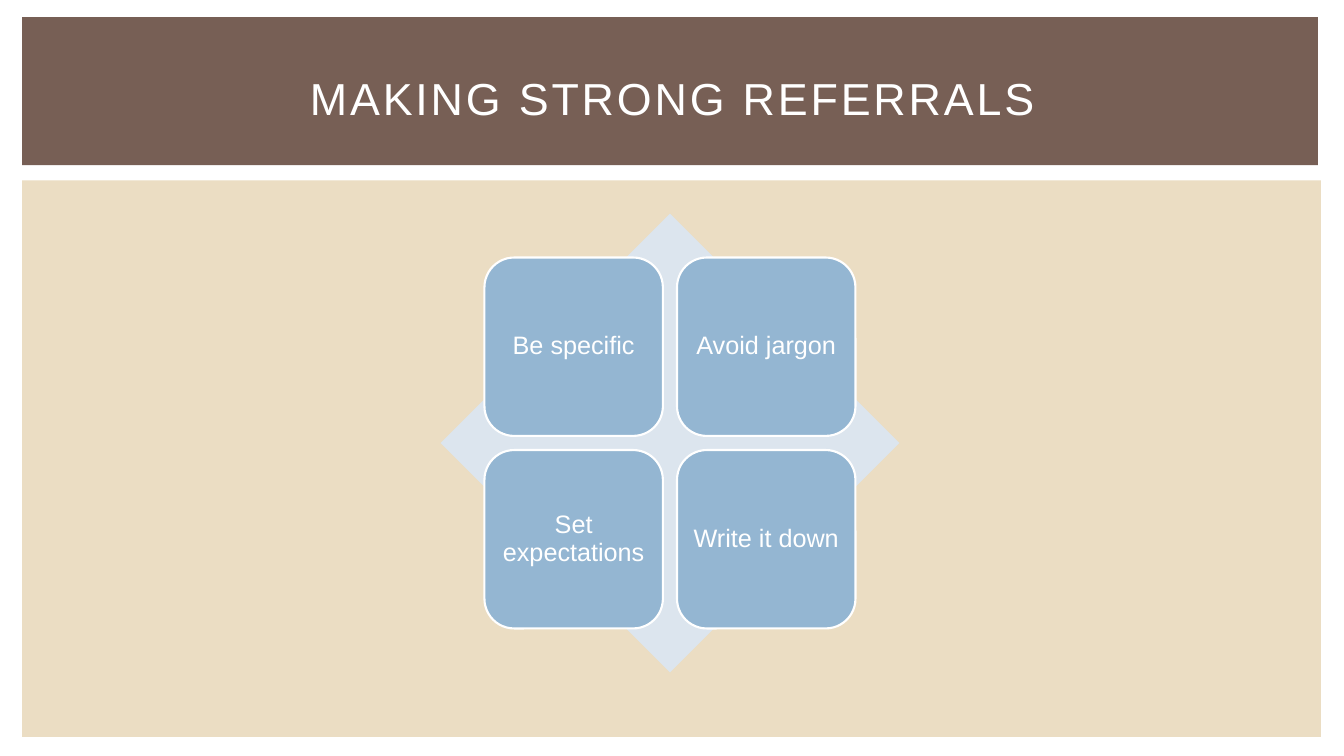
from dataclasses import dataclass

from pptx import Presentation
from pptx.dml.color import RGBColor
from pptx.enum.shapes import MSO_SHAPE
from pptx.enum.text import MSO_ANCHOR, PP_ALIGN
from pptx.util import Inches, Pt


@dataclass(frozen=True)
class Theme:
    font: str = "Arial"
    white: str = "FFFFFF"
    banner: str = "775F55"
    panel: str = "EBDDC3"
    diamond: str = "DCE5EE"
    tile: str = "94B6D2"
    title_size: int = 32
    tile_size: int = 18
    tile_line: float = 1.5


THEME = Theme()


def add_block(slide, kind, box, fill, line=None):
    sp = slide.shapes.add_shape(kind, *map(Inches, box))
    sp.shadow.inherit = False
    sp.fill.solid()
    sp.fill.fore_color.rgb = RGBColor.from_string(fill)
    if line:
        sp.line.color.rgb = RGBColor.from_string(line)
        sp.line.width = Pt(THEME.tile_line)
    else:
        sp.line.fill.background()
    return sp


def add_text(sp, text, size, inset=0):
    tf = sp.text_frame
    tf.word_wrap = True
    tf.vertical_anchor = MSO_ANCHOR.MIDDLE
    tf.margin_left = tf.margin_right = Inches(inset)
    tf.margin_top = tf.margin_bottom = Inches(inset)
    p = tf.paragraphs[0]
    p.alignment = PP_ALIGN.CENTER
    r = p.add_run()
    r.text = text
    r.font.name = THEME.font
    r.font.size = Pt(size)
    r.font.color.rgb = RGBColor.from_string(THEME.white)
    return p, r


def add_banner(slide, box, title):
    left, top, width, height = box
    add_block(slide, MSO_SHAPE.RECTANGLE, box, THEME.banner)
    title_box = (left + 0.34, top + 0.22, width - 0.63, height - 0.32)
    tb = slide.shapes.add_textbox(*map(Inches, title_box))
    p, r = add_text(tb, title, THEME.title_size, 0.05)
    r.font._element.set("spc", "200")


def add_matrix(slide, box, labels):
    left, top, side, _ = box
    add_block(slide, MSO_SHAPE.DIAMOND, box, THEME.diamond)
    tile, gap = 1.77, 0.14
    margin = (side - 2 * tile - gap) / 2
    for i, label in enumerate(labels):
        row, col = divmod(i, 2)
        x = left + margin + col * (tile + gap)
        y = top + margin + row * (tile + gap)
        sp = add_block(slide, MSO_SHAPE.ROUNDED_RECTANGLE, (x, y, tile, tile),
                       THEME.tile, THEME.white)
        p, r = add_text(sp, label, THEME.tile_size)
        p.line_spacing = 0.9


def main():
    prs = Presentation()
    prs.slide_width = Inches(13.33)
    prs.slide_height = Inches(7.5)
    s = prs.slides.add_slide(prs.slide_layouts[6])
    add_block(s, MSO_SHAPE.RECTANGLE, (0.22, 1.79, 12.88, 5.52), THEME.panel)
    add_banner(s, (0.22, 0.17, 12.85, 1.47), "MAKING STRONG REFERRALS")
    add_matrix(s, (4.37, 2.12, 4.55, 4.55),
               ["Be specific", "Avoid jargon", "Set expectations", "Write it down"])
    prs.save("out.pptx")


if __name__ == "__main__":
    main()
